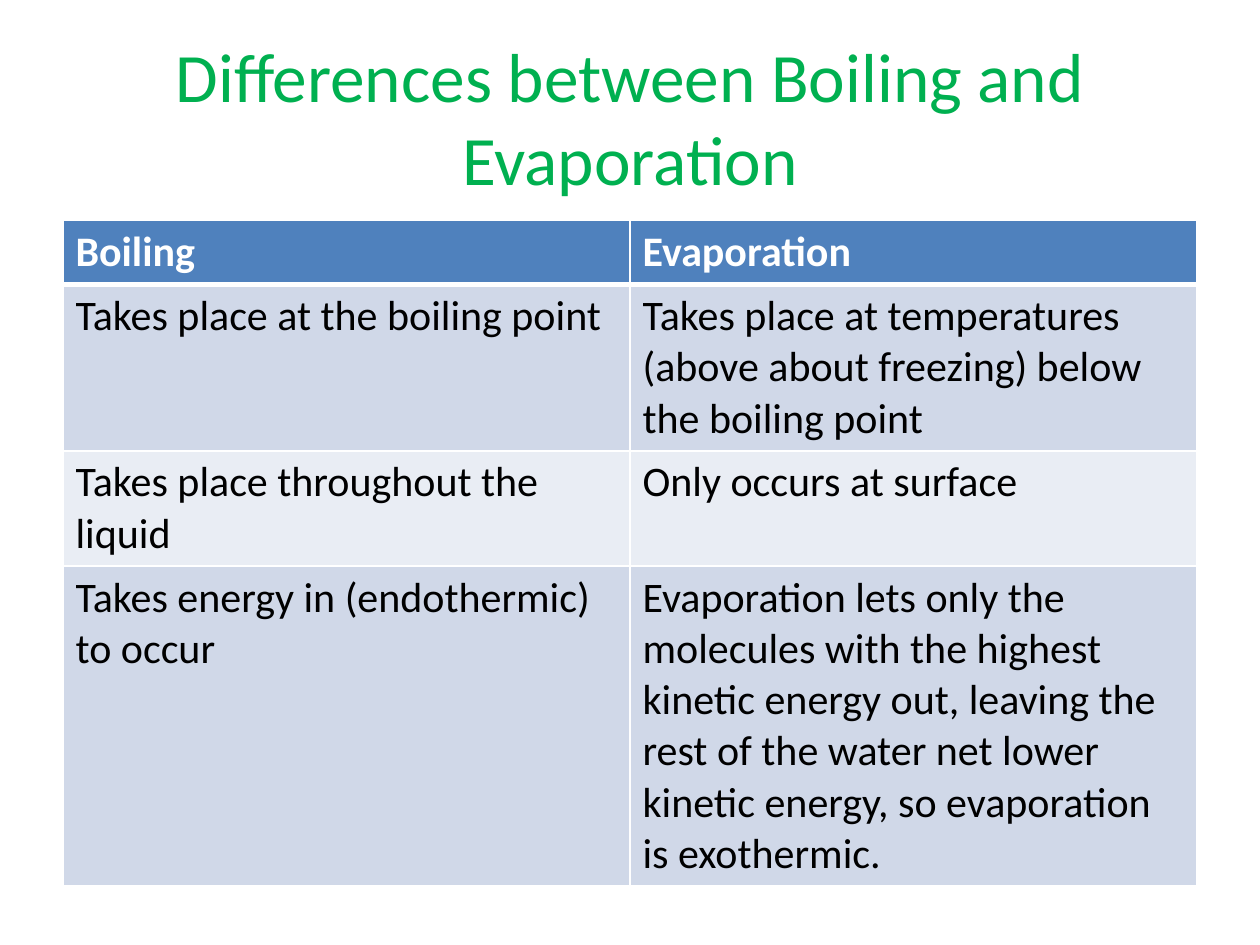
from dataclasses import dataclass

from lxml import etree
from pptx import Presentation, util as u
from pptx.dml.color import RGBColor
from pptx.enum import text
from pptx.oxml import ns


@dataclass(frozen=True)
class Theme:
    font: str = "Calibri"
    title_size: float = 39.6
    cell_size: float = 24
    title: str = "00B050"
    paper: str = "FFFFFF"
    ink: str = "000000"
    header: str = "4F81BD"
    bands: tuple = ("D0D8E8", "E9EDF4")
    thin: float = 1
    thick: float = 3


class Deck:
    def __init__(self, theme, width, height):
        self.theme = theme
        self.presentation = Presentation()
        self.presentation.slide_width = u.Inches(width)
        self.presentation.slide_height = u.Inches(height)
        self.slide = None

    def add_slide(self):
        layout = self.presentation.slide_layouts.get_by_name("Title Only")
        self.slide = self.presentation.slides.add_slide(layout)

    def box(self, left, top, width, height):
        across = self.presentation.slide_width
        down = self.presentation.slide_height
        return [round(share * full) for share, full in
                ((left, across), (top, down), (width, across), (height, down))]

    def add_text(self, paragraph, words, size, color, bold=False):
        run = paragraph.add_run()
        run.text = words
        run.font.name = self.theme.font
        run.font.size = u.Pt(size)
        run.font.bold = bold
        run.font.color.rgb = RGBColor.from_string(color)

    def paint(self, target, color):
        target.fill.solid()
        target.fill.fore_color.rgb = RGBColor.from_string(color)

    def title(self, words, area):
        shape = self.slide.shapes.title
        shape.left, shape.top, shape.width, shape.height = self.box(*area)
        self.paint(shape, self.theme.paper)
        frame = shape.text_frame
        frame.word_wrap = True
        frame.auto_size = text.MSO_AUTO_SIZE.NONE
        frame.vertical_anchor = text.MSO_ANCHOR.MIDDLE
        paragraph = frame.paragraphs[0]
        paragraph.alignment = text.PP_ALIGN.CENTER
        self.add_text(paragraph, words, self.theme.title_size, self.theme.title)

    def borders(self, cell, top, bottom):
        properties = cell._tc.get_or_add_tcPr()
        thin = self.theme.thin
        sides = (("L", thin), ("R", thin), ("T", top), ("B", bottom))
        for index, (side, width) in enumerate(sides):
            line = etree.Element(ns.qn(f"a:ln{side}"), w=str(u.Pt(width)))
            solid = etree.SubElement(line, ns.qn("a:solidFill"))
            etree.SubElement(solid, ns.qn("a:srgbClr"), val=self.theme.paper)
            properties.insert(index, line)

    def table(self, rows, area, row_shares):
        theme = self.theme
        left, top, width, height = self.box(*area)
        columns = len(rows[0])
        table = self.slide.shapes.add_table(
            len(rows), columns, left, top, width, height).table
        for row, share in zip(table.rows, row_shares):
            row.height = round(height * share / sum(row_shares))
        for row_index, row in enumerate(rows):
            is_header = row_index == 0
            band = theme.bands[(row_index - 1) % len(theme.bands)]
            for column_index, words in enumerate(row):
                cell = table.cell(row_index, column_index)
                self.paint(cell, theme.header if is_header else band)
                self.borders(cell,
                             theme.thick if row_index == 1 else theme.thin,
                             theme.thick if is_header else theme.thin)
                self.add_text(cell.text_frame.paragraphs[0], words,
                              theme.cell_size,
                              theme.paper if is_header else theme.ink,
                              is_header)


def main():
    deck = Deck(Theme(), 10, 7.5)
    deck.add_slide()
    deck.title("Differences between Boiling and Evaporation",
               (0.05, 0.04, 0.9, 1 / 6))
    deck.table(
        [
            ("Boiling", "Evaporation"),
            ("Takes place at the boiling point",
             "Takes place at temperatures (above about freezing) below "
             "the boiling point"),
            ("Takes place throughout the liquid", "Only occurs at surface"),
            ("Takes energy in (endothermic) to occur",
             "Evaporation lets only the molecules with the highest kinetic "
             "energy out, leaving the rest of the water net lower kinetic "
             "energy, so evaporation is exothermic."),
        ],
        (0.05, 7 / 30, 0.9, 0.7),
        (0.5, 1.32, 0.91, 2.53),
    )
    deck.presentation.save("out.pptx")


if __name__ == "__main__":
    main()
